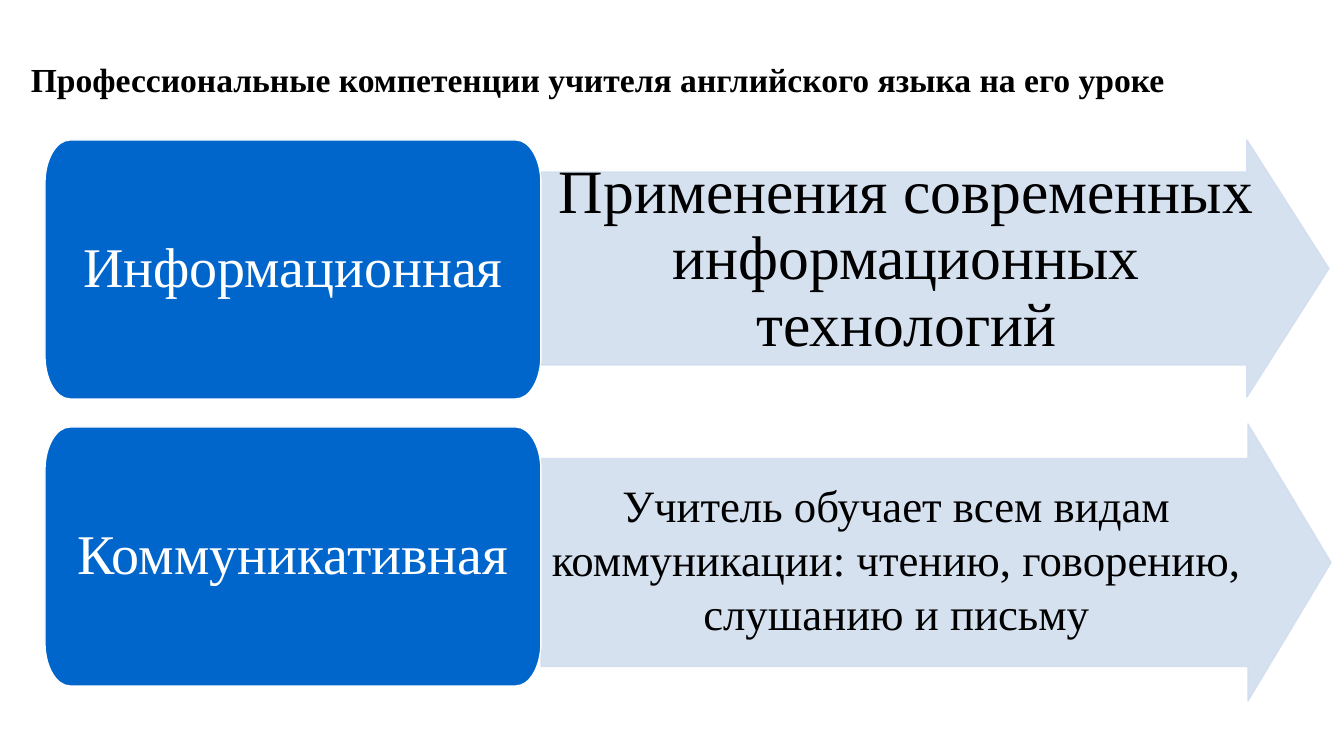
import pptx
import pptx.dml.color
import pptx.enum.text
import pptx.oxml
import pptx.oxml.ns
import pptx.util

# Content
HEADING = "Профессиональные компетенции учителя английского языка на его уроке"
COMPETENCIES = [
    {"name": "Информационная", "top": 140,
     "detail": "Применения современных информационных технологий",
     "arrow": {"top": 140, "height": 257, "neck": 1247, "tip": 1329}},
    {"name": "Коммуникативная", "top": 427,
     "detail": "Учитель обучает всем видам коммуникации: чтению, говорению, слушанию и письму",
     "arrow": {"top": 424, "height": 277, "neck": 1248, "tip": 1331}},
]

# Layout in px
WIDTH, HEIGHT = 1344, 756
BOX_LEFT, BOX_WIDTH, BOX_HEIGHT = 45, 496, 259
CORNER_X, CORNER_Y = 25, 43
ARROW_LEFT = BOX_LEFT + BOX_WIDTH
SHAFT_SHARE = 0.75
ROUNDNESS = 0.55

FONT = "Times New Roman"
BLUE, PALE, WHITE, BLACK = "0066CC", "D2DEEF", "FFFFFF", "000000"
CENTER = pptx.enum.text.PP_ALIGN.CENTER
MIDDLE = pptx.enum.text.MSO_ANCHOR.MIDDLE
TOP = pptx.enum.text.MSO_ANCHOR.TOP
GROW = pptx.enum.text.MSO_AUTO_SIZE.SHAPE_TO_FIT_TEXT
A = pptx.oxml.ns.nsdecls("a")
qn = pptx.oxml.ns.qn


def px(length):
    return round(length * 914400 / 100.8)


def color(value):
    return pptx.dml.color.RGBColor.from_string(value)


def write(shape, text, size, ink, frame_format, bold=False, **paragraph_format):
    frame = shape.text_frame
    paragraph = frame.paragraphs[0]
    run = paragraph.add_run()
    run.text = text
    font_format = {"name": FONT, "size": pptx.util.Pt(size), "bold": bold}
    for target, values in ((frame, {"word_wrap": True, **frame_format}),
                           (paragraph, paragraph_format), (run.font, font_format)):
        for key, value in values.items():
            setattr(target, key, value)
    run.font.color.rgb = color(ink)


def padding(anchor, left, top, right, bottom):
    return {"vertical_anchor": anchor, "margin_left": px(left), "margin_top": px(top),
            "margin_right": px(right), "margin_bottom": px(bottom)}


def add_text(left, top, width, height, text, size, **text_format):
    area = slide.shapes.add_textbox(px(left), px(top), px(width), px(height))
    write(area, text, size, BLACK, {"auto_size": GROW}, **text_format)


def add_outline(points, fill, line, alpha=None):
    corners = [(px(x), px(y)) for x, y in points]
    builder = slide.shapes.build_freeform(*corners[0])
    builder.add_line_segments(corners[1:], close=True)
    shape = builder.convert_to_shape()
    shape.shadow.inherit = False
    shape.fill.solid()
    shape.fill.fore_color.rgb = color(fill)
    shape.line.color.rgb = color(line)
    shape.line.width = pptx.util.Pt(1)
    if alpha:
        for tint in shape.element.spPr.iter(qn("a:srgbClr")):
            tint.append(pptx.oxml.parse_xml(f'<a:alpha {A} val="{alpha * 1000}"/>'))
    return shape


def arrow_points(top, height, neck, tip):
    shoulder = height * (1 - SHAFT_SHARE) / 2
    upper, lower, bottom = top + shoulder, top + height - shoulder, top + height
    return [(ARROW_LEFT, upper), (neck, upper), (neck, top), (tip, top + height / 2),
            (neck, bottom), (neck, lower), (ARROW_LEFT, lower)]


def box_points(top):
    # Clockwise; every second segment, from the first on, cuts a corner
    right, bottom = BOX_LEFT + BOX_WIDTH, top + BOX_HEIGHT
    inner_left, inner_right = BOX_LEFT + CORNER_X, right - CORNER_X
    upper, lower = top + CORNER_Y, bottom - CORNER_Y
    return [(BOX_LEFT, upper), (inner_left, top), (inner_right, top), (right, upper),
            (right, lower), (inner_right, bottom), (inner_left, bottom), (BOX_LEFT, lower)]


def round_corners(shape):
    vertices = list(shape.element.spPr.iter(qn("a:pt")))
    places = [(int(vertex.get("x")), int(vertex.get("y"))) for vertex in vertices]
    for start in range(0, 8, 2):
        (x1, y1), (x2, y2) = places[start:start + 2]
        corner_x, corner_y = (x1, y2) if start % 4 == 0 else (x2, y1)
        curve = [(x + (corner_x - x) * ROUNDNESS, y + (corner_y - y) * ROUNDNESS)
                 for x, y in ((x1, y1), (x2, y2))] + [(x2, y2)]
        stops = "".join(f'<a:pt x="{round(x)}" y="{round(y)}"/>' for x, y in curve)
        segment = vertices[start + 1].getparent()
        segment.getparent().replace(segment, pptx.oxml.parse_xml(
            f"<a:cubicBezTo {A}>{stops}</a:cubicBezTo>"))


deck = pptx.Presentation()
deck.slide_width, deck.slide_height = px(WIDTH), px(HEIGHT)
slide = deck.slides.add_slide(deck.slide_layouts[6])

# Arrows with the competency boxes at their tails
arrows = []
for competency in COMPETENCIES:
    arrows.append(add_outline(arrow_points(**competency["arrow"]), PALE, PALE, alpha=90))
    box = add_outline(box_points(competency["top"]), BLUE, WHITE)
    round_corners(box)
    write(box, competency["name"], 40, WHITE, padding(MIDDLE, 18, 13, 18, 13),
          alignment=CENTER, line_spacing=0.9, space_after=pptx.util.Pt(11))

# Details: the first inside its arrow, the second laid over it
information, communication = (competency["detail"] for competency in COMPETENCIES)
write(arrows[0], information, 44, BLACK, padding(TOP, 1, 20, 58, 20),
      alignment=CENTER, line_spacing=0.9, space_after=pptx.util.Pt(3))
add_text(ARROW_LEFT, 473, 711, 166, communication, 32, alignment=CENTER)

# Heading
add_text(21, 54, 1215, 49, HEADING, 24, bold=True)

deck.save("out.pptx")
